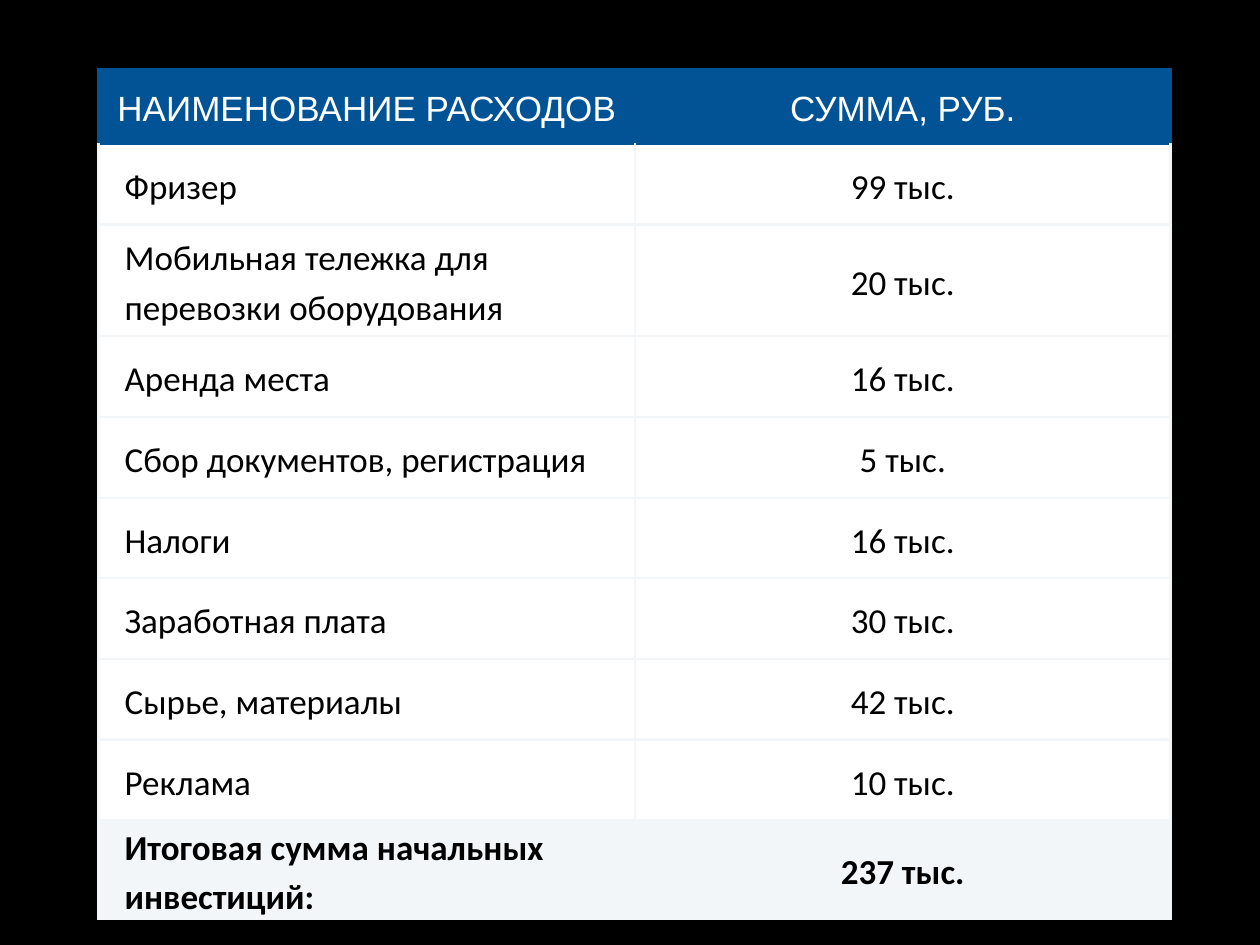
"""Build a slide with the table of start-up costs."""
from dataclasses import dataclass

from lxml.etree import SubElement
from pptx import Presentation
from pptx.dml.color import RGBColor
from pptx.enum.text import MSO_ANCHOR, PP_ALIGN
from pptx.oxml.ns import qn
from pptx.util import Pt


@dataclass(frozen=True)
class Theme:
    background: str = "000000"
    header: str = "025395"
    header_text: str = "FFFFFF"
    body: str = "FFFFFF"
    body_text: str = "000000"
    pale: str = "F2F6F9"
    header_font: str = "Arial"
    body_font: str = "Calibri"
    size: int = 20
    border: float = 1.5


def set_borders(cell, colors):
    tc_pr = cell._tc.get_or_add_tcPr()
    for side, color in colors.items():
        ln = SubElement(tc_pr, qn(f"a:ln{side}"), w=str(Pt(theme.border)))
        SubElement(SubElement(ln, qn("a:solidFill")), qn("a:srgbClr"), val=color)


theme = Theme()
rows = [
    ("НАИМЕНОВАНИЕ РАСХОДОВ", "СУММА, РУБ."),
    ("Фризер", "99 тыс."),
    ("Мобильная тележка для перевозки оборудования", "20 тыс."),
    ("Аренда места", "16 тыс."),
    ("Сбор документов, регистрация", "5 тыс."),
    ("Налоги", "16 тыс."),
    ("Заработная плата", "30 тыс."),
    ("Сырье, материалы", "42 тыс."),
    ("Реклама", "10 тыс."),
    ("Итоговая сумма начальных инвестиций:", "237 тыс."),
]
last = len(rows) - 1
row_height = 46.1
special_heights = {0: 41, 2: 64}
column_widths = (306.7, 306)
label_margins = dict(margin_left=Pt(15), margin_right=Pt(15), margin_top=0, margin_bottom=0)
amount_margins = dict.fromkeys(label_margins, Pt(8.5))

prs = Presentation()
prs.slide_width, prs.slide_height = Pt(720), Pt(540)
s = prs.slides.add_slide(prs.slide_layouts[6])
s.background.fill.solid()
s.background.fill.fore_color.rgb = RGBColor.from_string(theme.background)

heights = [special_heights.get(i, row_height) for i in range(len(rows))]
table = s.shapes.add_table(
    len(rows), 2, Pt(56.2), Pt(39.5), Pt(sum(column_widths)), Pt(sum(heights))
).table
for column, width in zip(table.columns, column_widths):
    column.width = Pt(width)

for i, texts in enumerate(rows):
    table.rows[i].height = Pt(heights[i])
    is_header = i == 0
    fill = theme.header if is_header else theme.pale if i == last else theme.body
    edge = theme.header if is_header else theme.pale
    borders = dict.fromkeys("LRTB", edge)
    if i == 1:
        borders["T"] = theme.header
    text_color = theme.header_text if is_header else theme.body_text
    font = {
        "name": theme.header_font if is_header else theme.body_font,
        "size": Pt(theme.size),
        "bold": i == last,
    }
    for j, text in enumerate(texts):
        is_label = j == 0 and not is_header
        cell = table.cell(i, j)
        set_borders(cell, borders)
        cell.fill.solid()
        cell.fill.fore_color.rgb = RGBColor.from_string(fill)
        cell.vertical_anchor = MSO_ANCHOR.MIDDLE
        for name, value in (label_margins if is_label else amount_margins).items():
            setattr(cell, name, value)
        p = cell.text_frame.paragraphs[0]
        p.alignment = PP_ALIGN.LEFT if is_label else PP_ALIGN.CENTER
        p.line_spacing = 1.15
        r = p.add_run()
        r.text = text
        for name, value in font.items():
            setattr(r.font, name, value)
        r.font.color.rgb = RGBColor.from_string(text_color)

prs.save("out.pptx")
